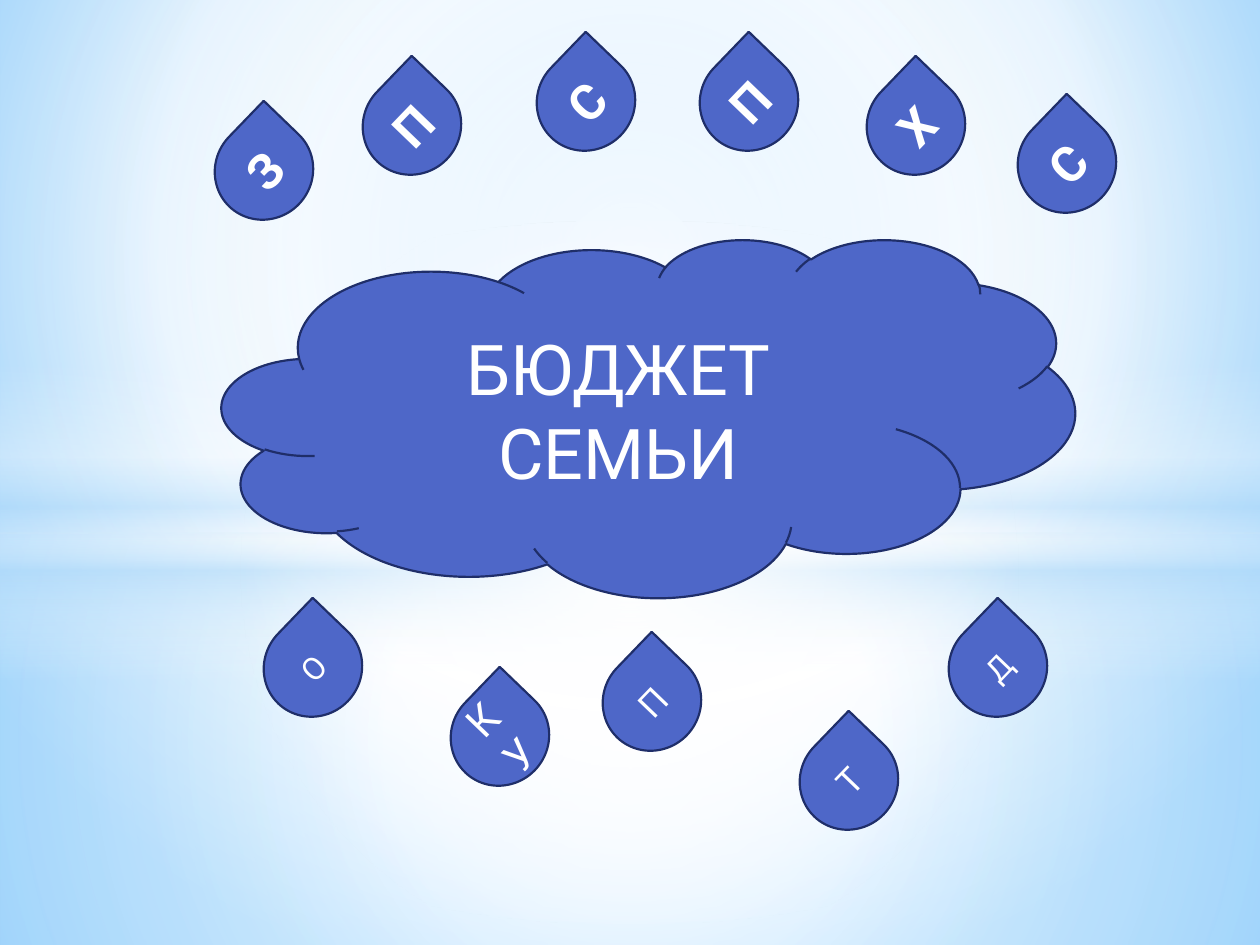
from lxml.etree import SubElement
from pptx import Presentation
from pptx.dml.color import RGBColor
from pptx.enum.shapes import MSO_SHAPE as Shape
from pptx.enum.text import MSO_ANCHOR, PP_ALIGN
from pptx.oxml.ns import qn
from pptx.util import Pt

PX = 914400 / 126
THEME = {
    "font": "Roboto", "text": "FFFFFF", "fill": "4E67C8", "line": "1F2E69",
    "white": "FFFFFF", "haze": "B4DCFA", "sky": "9ED5FF", "deep_sky": "5BB9FF",
    "line_width": 1.25, "cloud_size": 40, "top_size": 28,
}
WHITE, HAZE = THEME["white"], THEME["haze"]
CENTRE = (50, 50, 50, 50)


def paint_gradient(owner, fill, stops, focus=None):
    """Fill with (position, colour, opacity) stops: round a focus, or downwards."""
    fill.gradient()
    gradient = next(owner.element.iter(qn("a:gradFill")))
    for child in list(gradient):
        gradient.remove(child)
    stop_list = SubElement(gradient, qn("a:gsLst"))
    for position, colour, opacity in stops:
        stop = SubElement(stop_list, qn("a:gs"), pos=str(position * 1000))
        tint = SubElement(stop, qn("a:srgbClr"), val=colour)
        if opacity < 100:
            SubElement(tint, qn("a:alpha"), val=str(opacity * 1000))
    if focus:
        circle = SubElement(gradient, qn("a:path"), path="circle")
        sides = {side: str(inset * 1000) for side, inset in zip("ltrb", focus)}
        SubElement(circle, qn("a:fillToRect"), **sides)
    else:
        SubElement(gradient, qn("a:lin"), ang="5400000", scaled="0")


def add_shape(kind, left, top, width, height):
    box = [round(value * PX) for value in (left, top, width, height)]
    shape = slide.shapes.add_shape(kind, *box)
    shape.shadow.inherit = False
    return shape


presentation = Presentation()
presentation.slide_width = round(1260 * PX)
presentation.slide_height = round(945 * PX)
slide = presentation.slides.add_slide(presentation.slide_layouts[6])

# Sky
paint_gradient(
    slide, slide.background.fill,
    [(0, THEME["sky"], 100), (60, WHITE, 100), (100, THEME["deep_sky"], 100)],
    (20, 10, 20, 60))

sky_layers = [
    (Shape.RECTANGLE, (0, 533, 1260, 412), CENTRE,
     [(0, WHITE, 91), (37, WHITE, 76), (100, HAZE, 79)]),
    (Shape.RECTANGLE, (0, 0, 1260, 533), CENTRE,
     [(0, WHITE, 89), (48, WHITE, 62), (100, HAZE, 79)]),
    (Shape.RECTANGLE, (0, 365, 1260, 315), None,
     [(0, WHITE, 0), (29, WHITE, 30), (45, HAZE, 40),
      (55, WHITE, 26), (65, HAZE, 60), (100, WHITE, 0)]),
    (Shape.OVAL, (0, 221, 1260, 703), CENTRE,
     [(0, WHITE, 100), (54, WHITE, 0)]),
]
for kind, box, focus, stops in sky_layers:
    layer = add_shape(kind, *box)
    layer.line.fill.background()
    paint_gradient(layer, layer.fill, stops, focus)

# Cloud and drops: letter, left, top, type size
top_drops = [("П", 362, 77), ("С", 536, 53), ("П", 699, 53),
             ("Х", 866, 77), ("С", 1017, 115), ("З", 214, 122)]
bottom_drops = [("О", 263, 619, 18), ("К У", 450, 688, 24), ("П", 602, 653, 20),
                ("Т", 799, 732, 20), ("Д", 948, 619, 18)]

cloud = add_shape(Shape.CLOUD, 222, 239, 853, 358)
labelled = [(cloud, "БЮДЖЕТ СЕМЬИ", THEME["cloud_size"], False)]
drops = [(*drop, THEME["top_size"], True) for drop in top_drops]
drops += [(*drop, False) for drop in bottom_drops]
for letter, left, top, size, bold in drops:
    drop = add_shape(Shape.TEAR, left, top, 100, 97)
    drop.rotation = 313.9
    labelled.append((drop, letter, size, bold))

for shape, text, size, bold in labelled:
    shape.fill.solid()
    shape.fill.fore_color.rgb = RGBColor.from_string(THEME["fill"])
    shape.line.color.rgb = RGBColor.from_string(THEME["line"])
    shape.line.width = Pt(THEME["line_width"])
    frame = shape.text_frame
    frame.word_wrap = True
    frame.vertical_anchor = MSO_ANCHOR.MIDDLE
    paragraph = frame.paragraphs[0]
    paragraph.text = text
    paragraph.alignment = PP_ALIGN.CENTER
    font = paragraph.font
    font.name = THEME["font"]
    font.size = Pt(size)
    font.bold = bold
    font.color.rgb = RGBColor.from_string(THEME["text"])

presentation.save("out.pptx")
